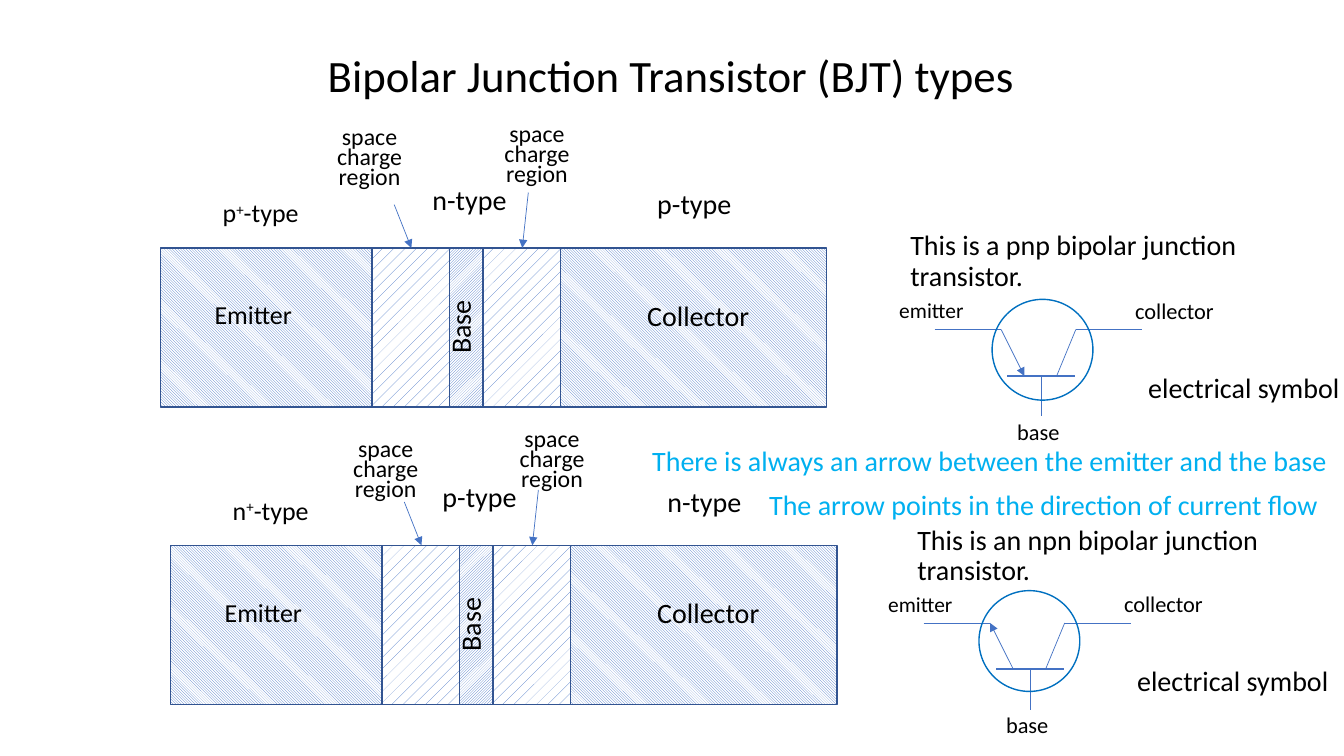
from lxml.etree import SubElement
from pptx import Presentation
from pptx.dml.color import RGBColor
from pptx.enum.dml import MSO_PATTERN
from pptx.enum.shapes import MSO_CONNECTOR, MSO_SHAPE
from pptx.enum.text import MSO_ANCHOR, MSO_AUTO_SIZE, PP_ALIGN
from pptx.oxml.ns import qn
from pptx.util import Inches, Pt

COLORS = {"text": "000000", "note": "00B0F0", "wire": "4472C4",
          "edge": "325491", "circle": "0070C0", "paper": "FFFFFF"}


def rgb(name):
    return RGBColor.from_string(COLORS[name])


def write(tf, runs, size, color="text", align=PP_ALIGN.LEFT, spacing=0.9, before=10):
    """Fill one paragraph; a run reading "+" is raised."""
    tf.word_wrap = True
    p = tf.paragraphs[0]
    p.alignment, p.line_spacing, p.space_before = align, spacing, Pt(before)
    for text in runs:
        r = p.add_run()
        r.text = text
        r.font.name, r.font.size = "Calibri", Pt(size)
        r.font.color.rgb = rgb(color)
        if text == "+":
            r.font._element.set("baseline", "30000")


def add_text(shapes, box, runs, size=20, **style):
    sp = shapes.add_textbox(*map(Inches, box))
    write(sp.text_frame, runs, size, **style)
    return sp


def add_line(shapes, start, end, width=0.5, arrow=False):
    c = shapes.add_connector(MSO_CONNECTOR.STRAIGHT, *map(Inches, start + end))
    c.line.color.rgb, c.line.width = rgb("wire"), Pt(width)
    if arrow:
        SubElement(c.line._get_or_add_ln(), qn("a:tailEnd"), type="triangle")
    SubElement(c._element.spPr, qn("a:effectLst"))


def add_title(s, box, text):
    sp = s.shapes.title
    sp.left, sp.top, sp.width, sp.height = map(Inches, box)
    tf = sp.text_frame
    tf.auto_size, tf.vertical_anchor = MSO_AUTO_SIZE.NONE, MSO_ANCHOR.MIDDLE
    write(tf, [text], 32, before=0)


def add_bar(s, x, y, emitter, base, collector, regions, collector_top):
    """Layered transistor whose bar starts at x, y."""
    shapes = s.shapes.add_group_shape().shapes

    # Doped layers, then the two space charge regions
    down, up = MSO_PATTERN.LIGHT_DOWNWARD_DIAGONAL, MSO_PATTERN.LIGHT_UPWARD_DIAGONAL
    dots = MSO_PATTERN.PERCENT_10
    for dx, width, pattern in [(0, 6.61, down), (2.87, 0.52, up),
                               (2.1, 0.77, dots), (3.2, 0.77, dots)]:
        sp = shapes.add_shape(MSO_SHAPE.RECTANGLE, Inches(x + dx), Inches(y),
                              Inches(width), Inches(1.58))
        sp.shadow.inherit = False
        sp.fill.patterned()
        sp.fill.pattern = pattern
        sp.fill.fore_color.rgb, sp.fill.back_color.rgb = rgb("wire"), rgb("paper")
        sp.line.color.rgb, sp.line.width = rgb("edge"), Pt(1)

    # Doping types and layer names
    for dx, dy, width, runs, size in [
            (0.52, -0.52, 1.01, emitter, 18.5), (2.6, -0.66, 1.01, base, 20),
            (4.83, collector_top, 1.01, collector, 20),
            (0.44, 0.49, 1.01, ["Emitter"], 18.5),
            (4.73, 0.49, 1.34, ["Collector"], 20)]:
        add_text(shapes, (x + dx, y + dy, width, 0.44), runs, size)
    sp = add_text(shapes, (x + 2.79, y + 0.16, 0.52, 0.99), ["Base"])
    sp.text_frame._txBody.bodyPr.set("vert", "vert270")

    # Space charge labels with their arrows
    for dx, dy in regions:
        add_text(shapes, (x + dx, y + dy, 1.29, 0.72), ["space charge region"], 17,
                 align=PP_ALIGN.CENTER, spacing=0.7)
    add_line(shapes, (x + 2.32, y - 0.43), (x + 2.49, y), arrow=True)
    add_line(shapes, (x + 3.65, y - 0.55), (x + 3.59, y), arrow=True)


def add_symbol(s, x, y, inset, arrow_to_base):
    """Circuit symbol with labels; inset is the circle's extra offset."""
    shapes = s.shapes.add_group_shape().shapes
    wire_y, bar_y = y + 0.32, y + 0.78

    # Wires
    add_line(shapes, (x + 0.45, wire_y), (x + 1.11, wire_y))
    add_line(shapes, (x + 1.85, wire_y), (x + 2.51, wire_y))
    add_line(shapes, (x + 1.17, bar_y), (x + 1.84, bar_y), width=1.5)
    add_line(shapes, (x + 1.66, bar_y), (x + 1.85, wire_y))
    add_line(shapes, (x + 1.51, bar_y), (x + 1.51, y + 1.18))
    ends = [(x + 1.11, wire_y), (x + 1.34, bar_y)]
    add_line(shapes, *(ends if arrow_to_base else ends[::-1]), arrow=True)

    # Circle
    sp = shapes.add_shape(MSO_SHAPE.OVAL, Inches(x + 1 + inset), Inches(y + inset),
                          Inches(1), Inches(1))
    sp.shadow.inherit = False
    sp.fill.background()
    sp.line.color.rgb, sp.line.width = rgb("circle"), Pt(1)

    # Labels
    for dx, dy, width, height, text, size, spacing in [
            (2.47, 0.71, 2.3, 0.48, "electrical symbol", 20, 0.9),
            (1.17, 1.18, 0.91, 0.48, "base", 16, 0.9),
            (0, 0, 0.91, 0.48, "emitter", 15.3, 0.8),
            (2.34, 0, 1.02, 0.33, "collector", 16, 0.8)]:
        add_text(shapes, (x + dx, y + dy, width, height), [text], size, spacing=spacing)


def main():
    prs = Presentation()
    prs.slide_width, prs.slide_height = Inches(13.33), Inches(7.5)
    s = prs.slides.add_slide(prs.slide_layouts[5])
    add_title(s, (3.15, 0.3, 8.42, 0.95), "Bipolar Junction Transistor (BJT) types")

    # pnp above, npn below
    add_bar(s, 1.59, 2.46, ["p", "+", "-type"], ["n-type"], ["p-type"],
            [(1.43, -1.22), (3.09, -1.25)], -0.62)
    add_bar(s, 1.69, 5.41, ["n", "+", "-type"], ["p-type"], ["n-type"],
            [(1.49, -1.08), (3.14, -1.18)], -0.61)
    add_symbol(s, 8.82, 2.95, 0.02, True)
    add_symbol(s, 8.71, 5.86, 0, False)

    # Captions and notes
    add_text(s.shapes, (8.93, 2.25, 3.66, 0.77),
             ["This is a pnp bipolar junction transistor."])
    add_text(s.shapes, (9, 5.17, 3.66, 0.77),
             ["This is an npn bipolar junction transistor."])
    add_text(s.shapes, (6.37, 4.39, 6.96, 0.46),
             ["There is always an arrow between the emitter and the base"], color="note")
    add_text(s.shapes, (7.53, 4.83, 5.88, 0.43),
             ["The arrow points in the direction of current flow"], color="note")
    prs.save("out.pptx")


if __name__ == "__main__":
    main()
